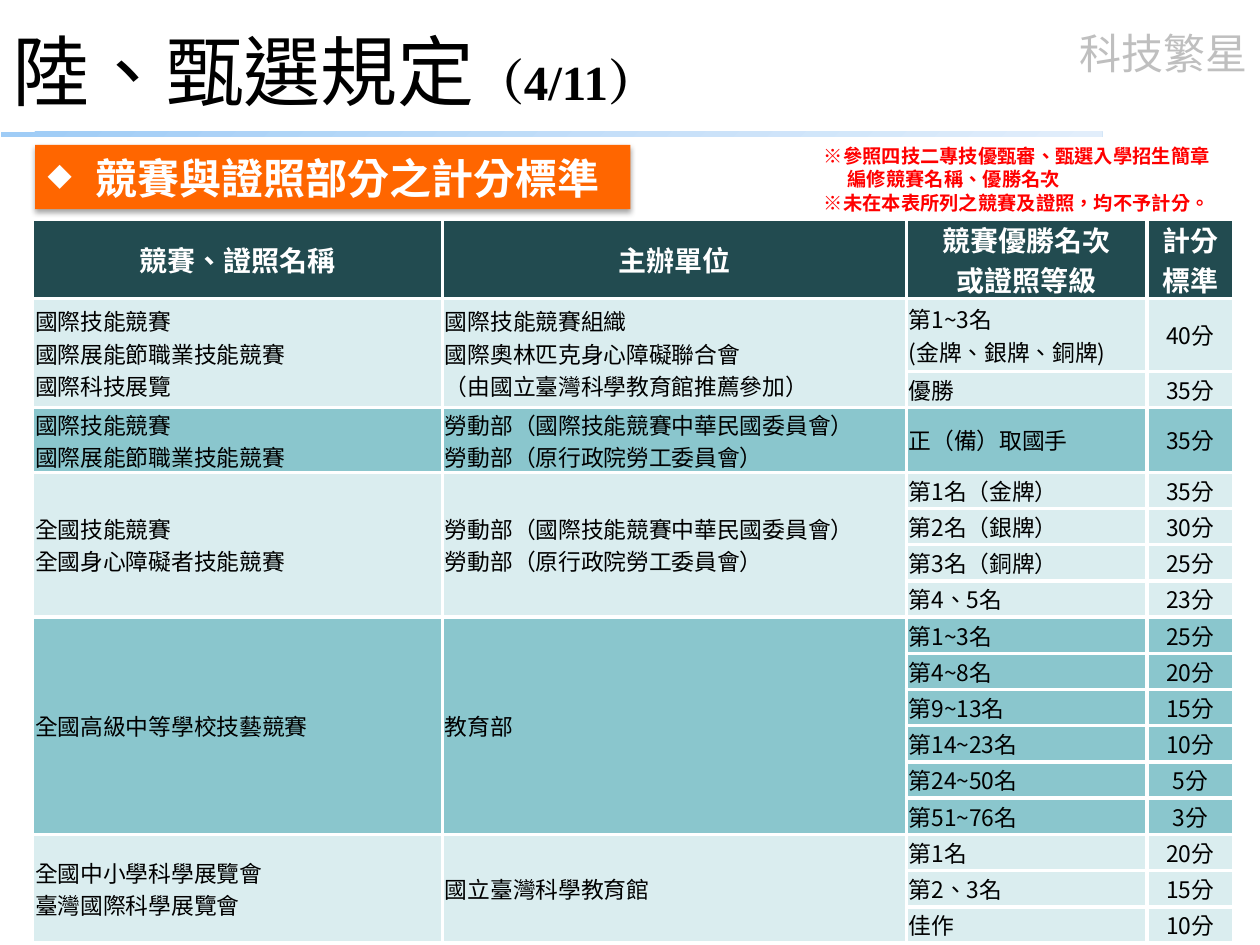
from lxml import etree
from pptx import Presentation
from pptx.dml.color import RGBColor
from pptx.enum import shapes, text
from pptx.oxml import parse_xml
from pptx.oxml.ns import nsdecls, qn
from pptx.util import Cm, Pt

SANS, SANS_TITLE, SERIF = "Noto Sans CJK SC", "Noto Sans CJK JP", "Times New Roman"
PALE, TEAL, DARK = "DAEDEF", "8AC6CD", "224B50"
ALIGN = text.PP_ALIGN

COLUMN_WIDTHS = [8.26, 9.35, 4.85, 1.75]
HEADER_HEIGHT, ROW_HEIGHT = 1.6, 0.73
TALL_ROWS = {1: 1.47, 3: 1.3}
HEADINGS = ["競賽、證照名稱", "主辦單位", "競賽優勝名次\v或證照等級", "計分\v標準"]
LABOR_MINISTRY = "勞動部（國際技能競賽中華民國委員會）\n勞動部（原行政院勞工委員會）"
# Contest names, organisers, and the points for each rank
CONTESTS = [
    ("國際技能競賽\n國際展能節職業技能競賽\n國際科技展覽",
     "國際技能競賽組織\n國際奧林匹克身心障礙聯合會\n（由國立臺灣科學教育館推薦參加）",
     [("第1~3名\n(金牌、銀牌、銅牌)", 40), ("優勝", 35)]),
    ("國際技能競賽\n國際展能節職業技能競賽", LABOR_MINISTRY, [("正（備）取國手", 35)]),
    ("全國技能競賽\n全國身心障礙者技能競賽", LABOR_MINISTRY,
     [("第1名（金牌）", 35), ("第2名（銀牌）", 30), ("第3名（銅牌）", 25), ("第4、5名", 23)]),
    ("全國高級中等學校技藝競賽", "教育部",
     [("第1~3名", 25), ("第4~8名", 20), ("第9~13名", 15),
      ("第14~23名", 10), ("第24~50名", 5), ("第51~76名", 3)]),
    ("全國中小學科學展覽會\n臺灣國際科學展覽會", "國立臺灣科學教育館",
     [("第1名", 20), ("第2、3名", 15), ("佳作", 10)]),
]


def rgb(value):
    return RGBColor.from_string(value)


def format_run(run, size, color, font=SANS, bold=False):
    run.font.size, run.font.bold, run.font.name = Pt(size), bold, font
    run.font.color.rgb = rgb(color)
    properties = run._r.get_or_add_rPr()
    properties.set("lang", "en-US")
    properties.set("altLang", "zh-TW")
    properties.set("lang", "zh-TW")
    etree.SubElement(properties, qn("a:ea")).set("typeface", font)


def format_frame(frame, align, *style):
    """Apply one alignment and one run style to all paragraphs."""
    for paragraph in frame.paragraphs:
        paragraph.alignment = align
        for run in paragraph.runs:
            format_run(run, *style)


def hang_indent(paragraph, length, bullet=None):
    properties = paragraph._p.get_or_add_pPr()
    properties.set("marL", str(length))
    properties.set("indent", str(-length))
    if bullet:
        etree.SubElement(properties, qn("a:buSzPct")).set("val", "75000")
        etree.SubElement(properties, qn("a:buChar")).set("char", bullet)


def add_textbox(slide, left, top, width, height, words):
    box = slide.shapes.add_textbox(Cm(left), Cm(top), Cm(width), Cm(height))
    box.text_frame.word_wrap = True
    box.text_frame.text = words
    return box.text_frame


def add_rectangle(slide, left, top, width, height):
    rectangle = slide.shapes.add_shape(
        shapes.MSO_SHAPE.RECTANGLE, Cm(left), Cm(top), Cm(width), Cm(height))
    rectangle.shadow.inherit = False
    rectangle.line.fill.background()
    return rectangle


def add_title(slide):
    title = slide.shapes.title
    title.left, title.top, title.width, title.height = Cm(0), Cm(0.53), Cm(22.86), Cm(1.75)
    frame = title.text_frame
    frame.auto_size = text.MSO_AUTO_SIZE.NONE
    frame.vertical_anchor = text.MSO_ANCHOR.MIDDLE
    paragraph = frame.paragraphs[0]
    paragraph.alignment = ALIGN.LEFT
    for words, style in (("陸、甄選規定", (44, "000000", SANS_TITLE)),
                         ("（4/11）", (28, "000000", SERIF, True))):
        run = paragraph.add_run()
        run.text = words
        format_run(run, *style)


def add_rule(slide):
    rule = add_rectangle(slide, 0.02, 2.66, 22.2, 0.1)
    rule.fill.gradient()
    rule.fill.gradient_angle = 315
    for stop, color in zip(rule.fill.gradient_stops, ("9FCCF6", "E2EEFB")):
        stop.color.rgb = rgb(color)


def add_banner(slide):
    banner = add_rectangle(slide, 0.71, 2.92, 12, 1.3)
    banner.fill.solid()
    banner.fill.fore_color.rgb = rgb("FF6600")
    effects = banner._element.spPr.find(qn("a:effectLst"))
    effects.append(parse_xml(
        f'<a:outerShdw {nsdecls("a")} blurRad="{Pt(3.1)}" dist="{Pt(1.8)}" dir="5400000" '
        'rotWithShape="0"><a:srgbClr val="000000"><a:alpha val="35000"/></a:srgbClr>'
        '</a:outerShdw>'))
    frame = banner.text_frame
    frame.text = "競賽與證照部分之計分標準"
    frame.vertical_anchor = text.MSO_ANCHOR.BOTTOM
    hang_indent(frame.paragraphs[0], Cm(0.96), "◆")
    format_frame(frame, ALIGN.LEFT, 24, "FFFFFF", SANS, True)


def add_remarks(slide):
    frame = add_textbox(slide, 16.36, 2.79, 8.43, 1.68,
                        "※參照四技二專技優甄審、甄選入學招生簡章編修競賽名稱、優勝名次\n"
                        "※未在本表所列之競賽及證照，均不予計分。")
    for paragraph in frame.paragraphs:
        hang_indent(paragraph, Cm(0.48))
    format_frame(frame, ALIGN.LEFT, 11, "FF0000", SANS, True)


def fill_cell(cell, words, background, align, *style):
    cell.text_frame.text = words
    cell.vertical_anchor = text.MSO_ANCHOR.MIDDLE
    cell.margin_left = cell.margin_right = Cm(0.05)
    cell.margin_top = cell.margin_bottom = 0
    format_frame(cell.text_frame, align, *style)
    cell.fill.solid()
    cell.fill.fore_color.rgb = rgb(background)


def add_borders(cell):
    properties = cell._tc.get_or_add_tcPr()
    for position, side in enumerate(("lnL", "lnR", "lnT", "lnB")):
        properties.insert(position, parse_xml(
            f'<a:{side} {nsdecls("a")} w="{Pt(2.25)}"><a:solidFill>'
            f'<a:srgbClr val="FFFFFF"/></a:solidFill></a:{side}>'))


def add_score_table(slide):
    row_count = 1 + sum(len(ranks) for _, _, ranks in CONTESTS)
    heights = [HEADER_HEIGHT] + [TALL_ROWS.get(i, ROW_HEIGHT) for i in range(1, row_count)]
    table = slide.shapes.add_table(
        row_count, len(COLUMN_WIDTHS), Cm(0.66), Cm(4.42),
        Cm(sum(COLUMN_WIDTHS)), Cm(sum(heights))).table
    table.horz_banding = False
    for column, width in zip(table.columns, COLUMN_WIDTHS):
        column.width = Cm(width)
    for row, height in zip(table.rows, heights):
        row.height = Cm(height)

    for column, heading in enumerate(HEADINGS):
        fill_cell(table.cell(0, column), heading, DARK, ALIGN.CENTER, 16, "FFFFFF", SANS, True)
    first = 1
    for index, (names, organisers, ranks) in enumerate(CONTESTS):
        background = TEAL if index % 2 else PALE
        last = first + len(ranks) - 1
        for row, (rank, points) in enumerate(ranks, first):
            owners = (names, organisers) if row == first else ("", "")
            for column, words in enumerate((*owners, rank, f"{points}分")):
                align = ALIGN.CENTER if column == 3 else ALIGN.JUSTIFY
                fill_cell(table.cell(row, column), words, background, align, 13, "000000")
        if last > first:
            for column in (0, 1):
                table.cell(first, column).merge(table.cell(last, column))
        first = last + 1
    for cell in table.iter_cells():
        add_borders(cell)


def main():
    deck = Presentation()
    deck.slide_width, deck.slide_height = Cm(25.4), Cm(19.05)
    slide = deck.slides.add_slide(deck.slide_layouts[5])
    add_rule(slide)
    track = add_textbox(slide, 20.9, 0.43, 4.5, 1.27, "科技繁星")
    format_frame(track, ALIGN.RIGHT, 24, "BFBFBF", SANS_TITLE)
    add_title(slide)
    add_banner(slide)
    add_score_table(slide)
    add_remarks(slide)
    deck.save("out.pptx")


if __name__ == "__main__":
    main()
